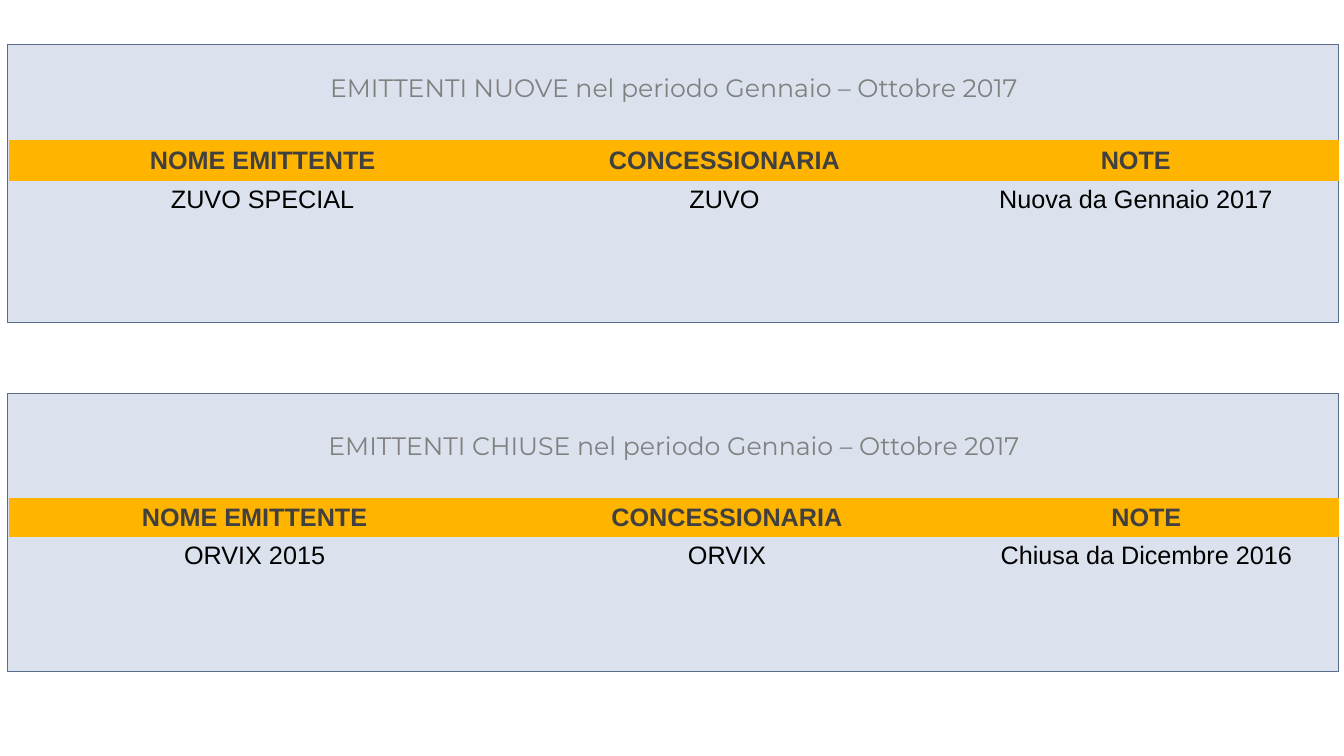
from pptx import Presentation
from pptx.dml.color import RGBColor
from pptx.enum.shapes import MSO_SHAPE
from pptx.enum.text import MSO_ANCHOR, PP_ALIGN
from pptx.oxml.ns import qn
from pptx.util import Inches, Pt

PANEL = RGBColor(0xDB, 0xE2, 0xED)
PANEL_LINE = RGBColor(0x57, 0x6B, 0x8A)
HEADER = RGBColor(0xFF, 0xB4, 0x00)
HEADER_TEXT = RGBColor(0x40, 0x40, 0x40)
TITLE_TEXT = RGBColor(0x80, 0x80, 0x80)
BODY_TEXT = RGBColor(0x00, 0x00, 0x00)

NO_STYLE = "{2D5ABB26-0587-4C30-8999-92F81FD0307C}"
COLUMNS = ("NOME EMITTENTE", "CONCESSIONARIA", "NOTE")
PANEL_LEFT, PANEL_WIDTH, PANEL_HEIGHT = 0.07, 13.21, 2.76


def write_cell(cell, text, font, color, bold=False):
    cell.text = text
    p = cell.text_frame.paragraphs[0]
    p.alignment = PP_ALIGN.CENTER
    for r in p.runs:
        r.font.name = font
        r.font.size = Pt(18)
        r.font.bold = bold
        r.font.color.rgb = color


def add_panel(slide, left, top, width, height):
    s = slide.shapes.add_shape(MSO_SHAPE.RECTANGLE, Inches(left), Inches(top),
                               Inches(width), Inches(height))
    s.shadow.inherit = False
    s.fill.solid()
    s.fill.fore_color.rgb = PANEL
    s.line.color.rgb = PANEL_LINE
    s.line.width = Pt(0.75)


def add_station_table(slide, left, top, title, station, widths, heights):
    frame = slide.shapes.add_table(len(heights), len(widths), Inches(left), Inches(top),
                                   Inches(sum(widths)), Inches(sum(heights)))
    table = frame.table
    table.first_row = table.horz_banding = False
    next(frame._element.iter(qn("a:tableStyleId"))).text = NO_STYLE
    for column, width in zip(table.columns, widths):
        column.width = Inches(width)
    for row, height in zip(table.rows, heights):
        row.height = Inches(height)
    for cell in table.iter_cells():
        cell.fill.background()
        cell.vertical_anchor = MSO_ANCHOR.MIDDLE
        cell.margin_top = cell.margin_bottom = 0

    # Title across all columns, raised above the middle of its row
    title_cell = table.cell(0, 0)
    title_cell.merge(table.cell(0, len(widths) - 1))
    title_cell.margin_bottom = Inches(0.31)
    write_cell(title_cell, title, "Montserrat", TITLE_TEXT)

    # Header and station rows
    for i, (name, value) in enumerate(zip(COLUMNS, station)):
        header = table.cell(1, i)
        header.fill.solid()
        header.fill.fore_color.rgb = HEADER
        write_cell(header, name, "Arial", HEADER_TEXT, bold=True)
        write_cell(table.cell(2, i), value, "Arial", BODY_TEXT)


def add_section(slide, top, table_offset, title, station, widths, heights):
    add_panel(slide, PANEL_LEFT, top, PANEL_WIDTH, PANEL_HEIGHT)
    add_station_table(slide, PANEL_LEFT + 0.02, top + table_offset, title, station,
                      widths, heights)


def main():
    prs = Presentation()
    prs.slide_width, prs.slide_height = Inches(13.33), Inches(7.5)
    slide = prs.slides.add_slide(prs.slide_layouts[6])

    # New stations
    add_section(slide, 0.44, 0.24, "EMITTENTI NUOVE nel periodo Gennaio – Ottobre 2017",
                ("ZUVO SPECIAL", "ZUVO", "Nuova da Gennaio 2017"),
                (5.03, 4.13, 4.03), (0.71, 0.41, 0.36, 0.41, 0.41))

    # Closed stations
    add_section(slide, 3.9, 0.32, "EMITTENTI CHIUSE nel periodo Gennaio – Ottobre 2017",
                ("ORVIX 2015", "ORVIX", "Chiusa da Dicembre 2016"),
                (4.87, 4.5, 3.82), (0.72, 0.39, 0.36, 0.41, 0.41))

    prs.save("out.pptx")


if __name__ == "__main__":
    main()
